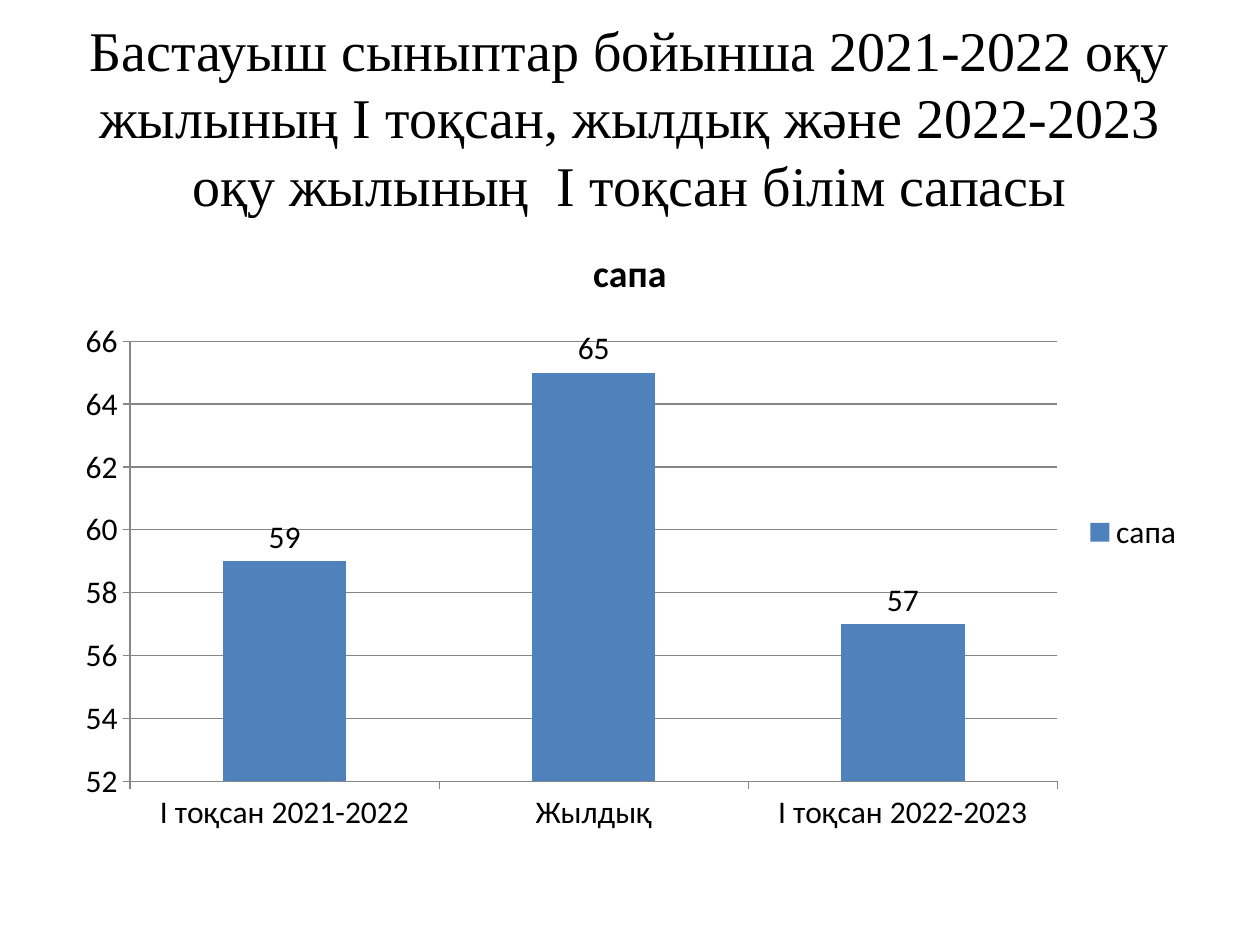
from dataclasses import dataclass

from pptx import Presentation
from pptx.chart.data import CategoryChartData
from pptx.dml.color import RGBColor
from pptx.enum.chart import XL_CHART_TYPE, XL_LABEL_POSITION, XL_LEGEND_POSITION, XL_TICK_MARK
from pptx.enum.text import MSO_ANCHOR, MSO_AUTO_SIZE, PP_ALIGN
from pptx.util import Pt

COLUMNS = XL_CHART_TYPE.COLUMN_CLUSTERED
OUTSIDE_END = XL_LABEL_POSITION.OUTSIDE_END
LEGEND_RIGHT = XL_LEGEND_POSITION.RIGHT
TICK_OUT = XL_TICK_MARK.OUTSIDE
MIDDLE = MSO_ANCHOR.MIDDLE
NO_AUTOFIT = MSO_AUTO_SIZE.NONE
CENTER = PP_ALIGN.CENTER
TITLE_ONLY = 5


@dataclass(frozen=True)
class Theme:
    text: RGBColor = RGBColor(0, 0, 0)
    bar: RGBColor = RGBColor(0x4F, 0x81, 0xBD)
    line: RGBColor = RGBColor(0x86, 0x86, 0x86)
    title_font: str = "Times New Roman"
    chart_font: str = "Calibri"
    title_size: Pt = Pt(32)
    chart_title_size: Pt = Pt(21.6)
    chart_size: Pt = Pt(18)


THEME = Theme()
LEFT, WIDTH = Pt(36), Pt(648)
TITLE = ("Бастауыш сыныптар бойынша 2021-2022 оқу жылының І тоқсан, "
         "жылдық және 2022-2023 оқу жылының  І тоқсан білім сапасы")
SERIES_NAME = "сапа"
QUALITY = {"І тоқсан 2021-2022": 59, "Жылдық": 65, "І тоқсан 2022-2023": 57}


def style_font(font, name, size, bold=False):
    font.name, font.size, font.bold = name, size, bold
    font.color.rgb = THEME.text


def set_title(page):
    title = page.shapes.title
    title.left, title.top, title.width, title.height = LEFT, Pt(21.6), WIDTH, Pt(90)
    frame = title.text_frame
    frame.text = TITLE
    frame.word_wrap = True
    frame.auto_size = NO_AUTOFIT
    frame.vertical_anchor = MIDDLE
    para = frame.paragraphs[0]
    para.alignment = CENTER
    style_font(para.runs[0].font, THEME.title_font, THEME.title_size)


def style_axis(axis):
    axis.major_tick_mark = TICK_OUT
    axis.format.line.color.rgb = THEME.line
    axis.format.line.width = Pt(0.75)


def style_values(chart):
    axis = chart.value_axis
    axis.minimum_scale, axis.maximum_scale, axis.major_unit = 52, 66, 2
    axis.has_major_gridlines = True
    grid_line = axis.major_gridlines.format.line
    grid_line.color.rgb = THEME.line
    grid_line.width = Pt(0.75)


def style_bars(plot):
    plot.gap_width = 150
    plot.vary_by_categories = False
    fill = plot.series[0].format.fill
    fill.solid()
    fill.fore_color.rgb = THEME.bar
    plot.has_data_labels = True
    plot.data_labels.show_value = True
    plot.data_labels.position = OUTSIDE_END


def add_quality_chart(page):
    data = CategoryChartData()
    data.categories = list(QUALITY)
    data.add_series(SERIES_NAME, list(QUALITY.values()))
    chart = page.shapes.add_chart(COLUMNS, LEFT, Pt(126), WIDTH, Pt(356.4), data).chart
    style_font(chart.font, THEME.chart_font, THEME.chart_size)

    chart.has_title = True
    frame = chart.chart_title.text_frame
    frame.text = SERIES_NAME
    style_font(frame.paragraphs[0].runs[0].font, THEME.chart_font,
               THEME.chart_title_size, bold=True)

    chart.has_legend = True
    chart.legend.position = LEGEND_RIGHT
    chart.legend.include_in_layout = False

    for axis in (chart.category_axis, chart.value_axis):
        style_axis(axis)
    style_values(chart)
    style_bars(chart.plots[0])


def main():
    deck = Presentation()
    deck.slide_width, deck.slide_height = Pt(720), Pt(540)
    page = deck.slides.add_slide(deck.slide_layouts[TITLE_ONLY])
    set_title(page)
    add_quality_chart(page)
    deck.save("out.pptx")


if __name__ == "__main__":
    main()
